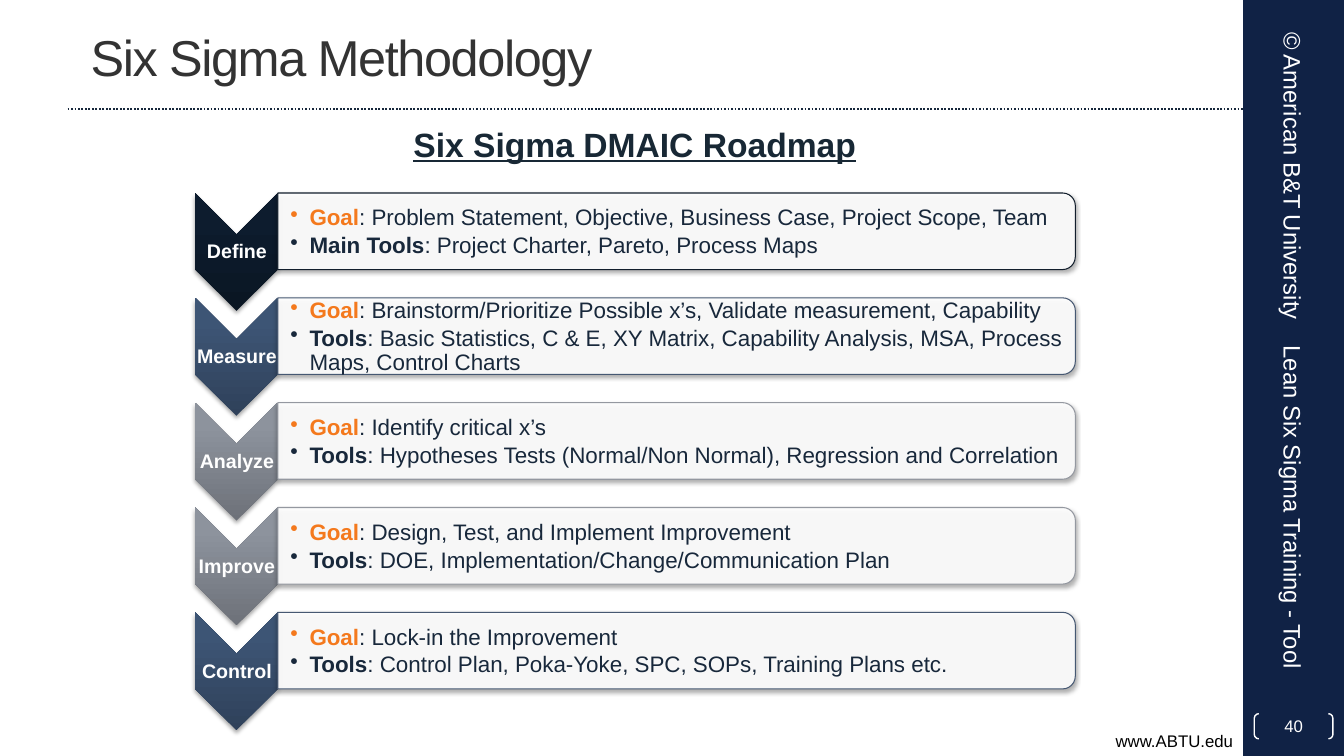
from lxml.etree import SubElement
from pptx import Presentation
from pptx.dml.color import RGBColor
from pptx.enum.dml import MSO_LINE
from pptx.enum.shapes import MSO_CONNECTOR, MSO_SHAPE
from pptx.enum.text import MSO_ANCHOR, PP_ALIGN
from pptx.oxml.ns import qn
from pptx.util import Inches, Pt

COLORS = {
    "sidebar": "102245", "rule": "17273B", "title": "333333", "heading": "182835",
    "body": "18283B", "goal": "F4791D", "white": "FFFFFF", "black": "000000",
}
# Phase palettes: gradient bottom, gradient top, panel outline
PALETTES = {
    "navy": ("0A1623", "0D1C2E", "121E2C"),
    "blue": ("2F415A", "3D5575", "465872"),
    "gray": ("6D7179", "8D939D", "9498A0"),
}
PHASES = [
    ("Define", "navy", "Problem Statement, Objective, Business Case, Project Scope, Team",
     "Main Tools", "Project Charter, Pareto, Process Maps"),
    ("Measure", "blue", "Brainstorm/Prioritize Possible x’s, Validate measurement, Capability",
     "Tools", "Basic Statistics, C & E, XY Matrix, Capability Analysis, MSA, "
     "Process Maps, Control Charts"),
    ("Analyze", "gray", "Identify critical x’s",
     "Tools", "Hypotheses Tests (Normal/Non Normal), Regression and Correlation"),
    ("Improve", "gray", "Design, Test, and Implement Improvement",
     "Tools", "DOE, Implementation/Change/Communication Plan"),
    ("Control", "blue", "Lock-in the Improvement",
     "Tools", "Control Plan, Poka-Yoke, SPC, SOPs, Training Plans etc."),
]
PHASE_TOP, PHASE_STEP = 1.92, 1.04


class RoadmapSlide:
    font_name = "Arial"

    def __init__(self, slide):
        self.slide = slide

    def rgb(self, color):
        return RGBColor.from_string(COLORS.get(color, color))

    def style(self, paragraph, size, color, bold=None):
        font = paragraph.font
        font.name, font.size, font.bold = self.font_name, Pt(size), bold
        font.color.rgb = self.rgb(color)

    def frame(self, shape, insets, anchor):
        frame = shape.text_frame
        frame.word_wrap = True
        frame.vertical_anchor = anchor
        (frame.margin_left, frame.margin_top,
         frame.margin_right, frame.margin_bottom) = map(Inches, insets)
        return frame

    def text(self, box, words, size, color, align=PP_ALIGN.LEFT, bold=None,
             insets=(0.1, 0.05, 0.1, 0.05), anchor=MSO_ANCHOR.MIDDLE, rotation=0):
        shape = self.slide.shapes.add_textbox(*map(Inches, box))
        shape.rotation = rotation
        paragraph = self.frame(shape, insets, anchor).paragraphs[0]
        paragraph.text = words
        paragraph.alignment = align
        self.style(paragraph, size, color, bold)
        return paragraph

    def shape(self, kind, box, rotation=0, fill=None, line=None, width=1):
        shape = self.slide.shapes.add_shape(kind, *map(Inches, box))
        shape.rotation = rotation
        shape.shadow.inherit = False
        if fill:
            shape.fill.solid()
            shape.fill.fore_color.rgb = self.rgb(fill)
        else:
            shape.fill.background()
        if line:
            shape.line.color.rgb = self.rgb(line)
            shape.line.width = Pt(width)
        else:
            shape.line.fill.background()
        return shape

    def drop_shadow(self, shape):
        effects = shape._element.spPr.find(qn("a:effectLst"))
        shadow = SubElement(effects, qn("a:outerShdw"), blurRad=str(Pt(3.1)),
                            dist=str(Pt(1.8)), dir="5400000", rotWithShape="0")
        black = SubElement(shadow, qn("a:srgbClr"), val=COLORS["black"])
        SubElement(black, qn("a:alpha"), val="35000")

    def chevron(self, box, bottom, top):
        shape = self.shape(MSO_SHAPE.CHEVRON, box, rotation=90)
        shape.fill.gradient()
        shape.fill.gradient_angle = 90
        for stop, position, color in zip(shape.fill.gradient_stops, (0, 0.8), (bottom, top)):
            stop.position = position
            stop.color.rgb = self.rgb(color)
        shape._element.spPr.find(qn("a:gradFill")).set("rotWithShape", "0")
        self.drop_shadow(shape)

    def panel(self, box, outline):
        shape = self.shape(MSO_SHAPE.ROUND_2_SAME_RECTANGLE, box, 90, "white", outline, 0.75)
        white = shape._element.spPr.find(qn("a:solidFill"))[0]
        SubElement(white, qn("a:alpha"), val="90000")
        self.drop_shadow(shape)

    def bullets(self, box, items):
        shape = self.slide.shapes.add_textbox(*map(Inches, box))
        frame = self.frame(shape, (0.12, 0.01, 0.01, 0.01), MSO_ANCHOR.MIDDLE)
        for index, (term, details, color) in enumerate(items):
            paragraph = frame.add_paragraph() if index else frame.paragraphs[0]
            paragraph.line_spacing = 0.9
            paragraph.space_after = Pt(2.6)
            properties = paragraph._p.get_or_add_pPr()
            properties.set("marL", str(Inches(0.19)))
            properties.set("indent", str(Inches(-0.19)))
            bullet_color = SubElement(properties, qn("a:buClr"))
            SubElement(bullet_color, qn("a:srgbClr"), val=COLORS[color])
            SubElement(properties, qn("a:buChar"), char="•")
            self.style(paragraph, 16, "body")
            term_run = paragraph.add_run()
            term_run.text = term
            term_run.font.bold = True
            term_run.font.color.rgb = self.rgb(color)
            paragraph.add_run().text = f": {details}"

    def dotted_rule(self, start, end):
        rule = self.slide.shapes.add_connector(
            MSO_CONNECTOR.STRAIGHT, *map(Inches, start + end))
        rule.line.color.rgb = self.rgb("rule")
        rule.line.width = Pt(1.25)
        rule.line.dash_style = MSO_LINE.ROUND_DOT
        SubElement(rule._element.spPr, qn("a:effectLst"))

    def page_number(self, box, number):
        bracket = self.shape(MSO_SHAPE.DOUBLE_BRACKET, box, line="white")
        bracket.adjustments[0] = 0.18
        paragraph = self.frame(bracket, (0, 0, 0, 0), MSO_ANCHOR.MIDDLE).paragraphs[0]
        paragraph.text = number
        paragraph.alignment = PP_ALIGN.CENTER
        self.style(paragraph, 12, "white")

    def phase(self, top, name, palette, goal, tools_term, tools):
        bottom_color, top_color, outline = PALETTES[palette]
        self.chevron((1.76, top + 0.17, 1.17, 0.82), bottom_color, top_color)
        label = self.text((1.94, top + 0.41, 0.82, 0.35), name, 14, "white",
                          PP_ALIGN.CENTER, True, insets=(0.01,) * 4)
        label.line_spacing = 0.9
        self.panel((6.33, top - 3.58, 0.76, 7.91), outline)
        self.bullets((2.76, top + 0.04, 7.87, 0.69),
                     [("Goal", goal, "goal"), (tools_term, tools, "body")])


def main():
    deck = Presentation()
    deck.slide_width, deck.slide_height = Inches(13.33), Inches(7.5)
    roadmap = RoadmapSlide(deck.slides.add_slide(deck.slide_layouts[6]))

    # Sidebar, rule and footer
    roadmap.shape(MSO_SHAPE.RECTANGLE, (12.33, 0, 1, 7.5), fill="sidebar")
    roadmap.dotted_rule((0.67, 1.08), (12.33, 1.08))
    roadmap.text((0, 7.2, 12.33, 0.3), "www.ABTU.edu", 12, "black",
                 PP_ALIGN.RIGHT, anchor=MSO_ANCHOR.TOP)

    # Title
    title = roadmap.text((0.67, 0.03, 11.11, 1.05), "Six Sigma Methodology", 36, "title",
                         insets=(0.23, 0.05, 0.1, 0.05))
    title.runs[0]._r.get_or_add_rPr().set("spc", "-100")

    # Sidebar content
    roadmap.page_number((12.44, 7.08, 0.78, 0.25), "40")
    roadmap.text((11.24, 1.48, 3.17, 0.53), "© American B&T University", 17, "white",
                 PP_ALIGN.CENTER, rotation=90)
    roadmap.text((10.99, 4.9, 3.67, 0.53), "Lean Six Sigma Training - Tool", 17, "white",
                 rotation=90)

    # DMAIC phases
    for index, phase in enumerate(PHASES):
        roadmap.phase(PHASE_TOP + index * PHASE_STEP, *phase)

    # Roadmap heading
    heading = roadmap.text((1.67, 1.18, 9.25, 0.5), "Six Sigma DMAIC Roadmap", 24, "heading",
                           PP_ALIGN.CENTER, True, anchor=MSO_ANCHOR.TOP)
    heading.font.underline = True

    deck.save("out.pptx")


if __name__ == "__main__":
    main()
